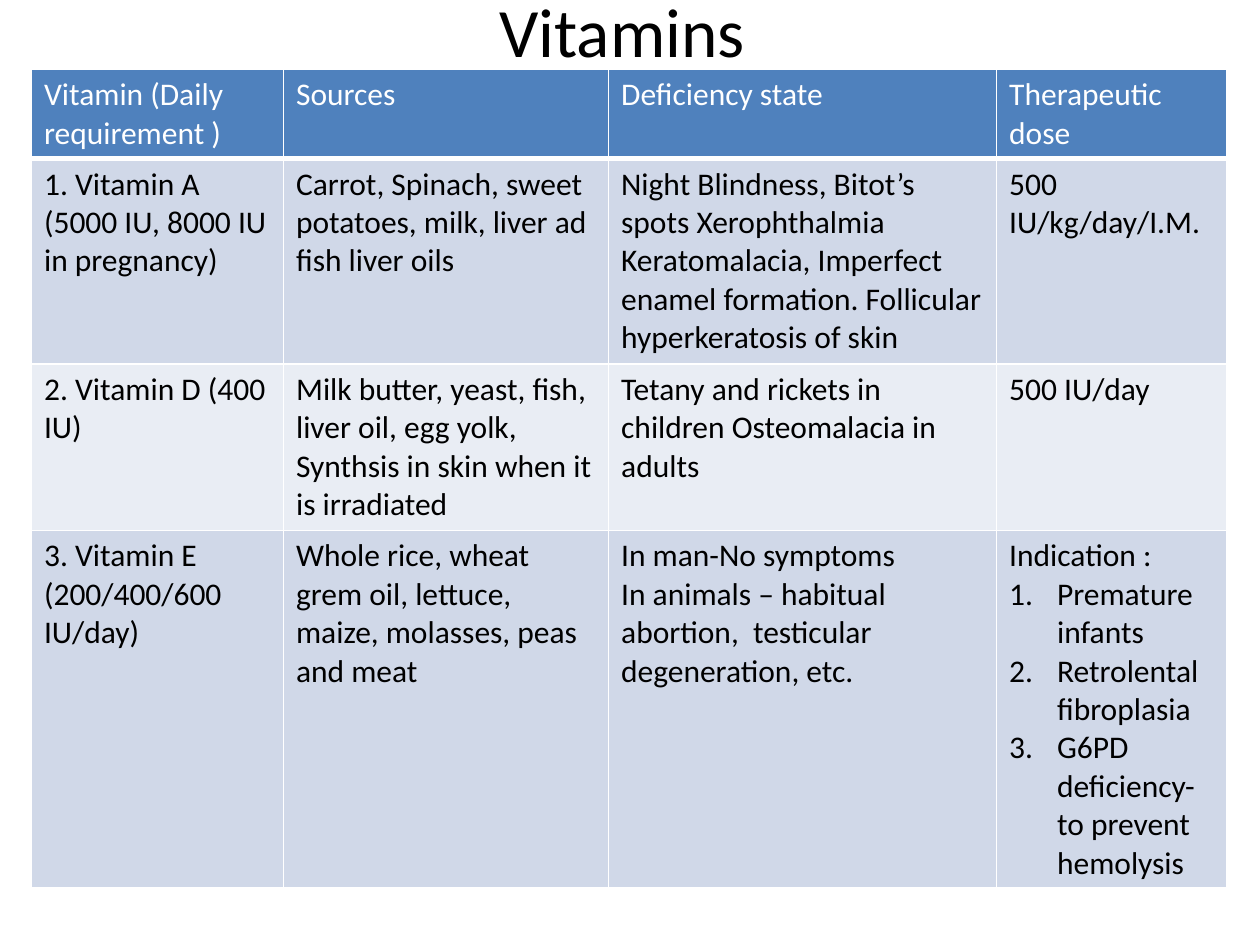
from lxml import etree
from pptx import Presentation
from pptx import util as u
from pptx.dml.color import RGBColor
from pptx.enum import text
from pptx.oxml.ns import qn

WHITE, BLACK, BLUE = "FFFFFF", "000000", "4F81BD"
BANDS = ["D0D8E8", "E9EDF4"]
COLUMN_WIDTHS = [2, 2.58, 3.08, 1.83]
ROW_HEIGHTS = [0.71, 1.63, 1.32, 2.84]

# Each cell is a list of paragraphs; a leading "#" marks a numbered item
ROWS = [
    [["Vitamin (Daily requirement )"], ["Sources"],
     ["Deficiency state"], ["Therapeutic dose"]],
    [["1. Vitamin A (5000 IU, 8000 IU in pregnancy)"],
     ["Carrot, Spinach, sweet potatoes, milk, liver ad fish liver oils"],
     ["Night Blindness, Bitot’s spots Xerophthalmia Keratomalacia, "
      "Imperfect enamel formation. Follicular hyperkeratosis of skin"],
     ["500 IU/kg/day/I.M."]],
    [["2. Vitamin D (400 IU)"],
     ["Milk butter, yeast, fish, liver oil, egg yolk, "
      "Synthsis in skin when it is irradiated"],
     ["Tetany and rickets in children Osteomalacia in adults"],
     ["500 IU/day"]],
    [["3. Vitamin E (200/400/600 IU/day)"],
     ["Whole rice, wheat grem oil, lettuce, maize, molasses, peas and meat"],
     ["In man-No symptoms",
      "In animals – habitual abortion,  testicular degeneration, etc."],
     ["Indication :", "#Premature infants", "#Retrolental fibroplasia",
      "#G6PD deficiency-to prevent hemolysis"]],
]


def colour(code):
    return RGBColor.from_string(code)


class SlideBuilder:
    def __init__(self, page, font="Calibri"):
        self.page = page
        self.font = font

    def add_span(self, para, words, size, code):
        span = para.add_run()
        span.text = words
        span.font.name = self.font
        span.font.size = u.Pt(size)
        span.font.bold = False
        span.font.color.rgb = colour(code)

    def title(self, words, left, top, width, height, size):
        box = self.page.shapes.add_textbox(
            *(u.Inches(length) for length in (left, top, width, height)))
        frame = box.text_frame
        frame.word_wrap = True
        frame.vertical_anchor = text.MSO_ANCHOR.MIDDLE
        para = frame.paragraphs[0]
        para.alignment = text.PP_ALIGN.CENTER
        self.add_span(para, words, size, BLACK)

    def number(self, para):
        properties = para._p.get_or_add_pPr()
        indent = u.Inches(0.38)
        properties.set("marL", str(indent))
        properties.set("indent", str(-indent))
        etree.SubElement(properties, qn("a:buFont"), typeface="+mj-lt")
        etree.SubElement(properties, qn("a:buAutoNum"), type="arabicPeriod")

    def borders(self, cell, bottom):
        properties = cell._tc.get_or_add_tcPr()
        for side, points in (("L", 1), ("R", 1), ("T", 1), ("B", bottom)):
            line = etree.SubElement(properties, qn(f"a:ln{side}"),
                                    w=str(u.Pt(points)))
            fill = etree.SubElement(line, qn("a:solidFill"))
            etree.SubElement(fill, qn("a:srgbClr"), val=WHITE)

    def cell(self, cell, paragraphs, fill, code, bottom):
        self.borders(cell, bottom)
        cell.fill.solid()
        cell.fill.fore_color.rgb = colour(fill)
        frame = cell.text_frame
        for index, words in enumerate(paragraphs):
            para = frame.add_paragraph() if index else frame.paragraphs[0]
            if words.startswith("#"):
                self.number(para)
            self.add_span(para, words.lstrip("#"), 18, code)

    def table(self, rows, left, top, widths, heights):
        table = self.page.shapes.add_table(
            len(rows), len(widths), u.Inches(left), u.Inches(top),
            u.Inches(sum(widths)), u.Inches(sum(heights))).table
        for column, width in zip(table.columns, widths):
            column.width = u.Inches(width)
        for r, (row, height) in enumerate(zip(rows, heights)):
            table.rows[r].height = u.Inches(height)
            header = r == 0
            fill = BLUE if header else BANDS[(r - 1) % 2]
            for c, paragraphs in enumerate(row):
                self.cell(table.cell(r, c), paragraphs, fill,
                          WHITE if header else BLACK, 3 if header else 1)


def main():
    deck = Presentation()
    deck.slide_width, deck.slide_height = u.Inches(10), u.Inches(7.5)
    builder = SlideBuilder(deck.slides.add_slide(deck.slide_layouts[6]))

    # Heading
    builder.title("Vitamins ", 0.5, 0, 9, 0.48, 39.6)

    # Vitamin overview
    builder.table(ROWS, 0.25, 0.55, COLUMN_WIDTHS, ROW_HEIGHTS)

    deck.save("out.pptx")


if __name__ == "__main__":
    main()
